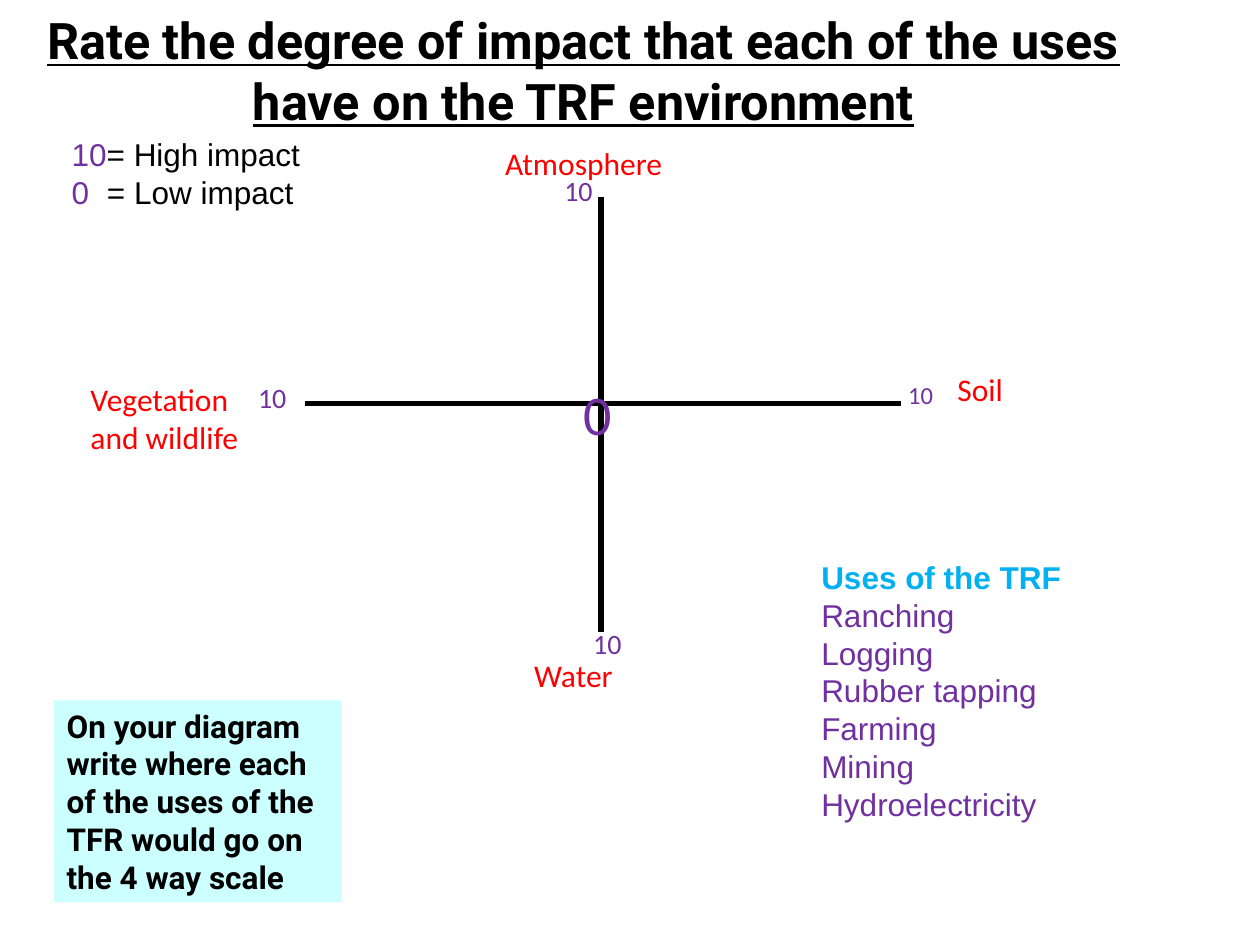
from dataclasses import dataclass

from lxml import etree
from pptx import Presentation
from pptx.dml.color import RGBColor
from pptx.enum.shapes import MSO_CONNECTOR
from pptx.enum.text import MSO_ANCHOR, MSO_AUTO_SIZE, PP_ALIGN
from pptx.oxml.ns import qn
from pptx.util import Inches, Pt

STRAIGHT = MSO_CONNECTOR.STRAIGHT
MIDDLE = MSO_ANCHOR.MIDDLE
TOP = MSO_ANCHOR.TOP
LEFT = PP_ALIGN.LEFT
CENTER = PP_ALIGN.CENTER
GROW = MSO_AUTO_SIZE.SHAPE_TO_FIT_TEXT
FIXED = MSO_AUTO_SIZE.NONE


@dataclass(frozen=True)
class Theme:
    ink: str = "000000"
    label: str = "FF0000"
    score: str = "7030A0"
    heading: str = "00B0F0"
    panel: str = "CCFFFF"
    display_font: str = "Roboto"
    label_font: str = "Calibri"
    list_font: str = "Arial"
    title_size: float = 28.8
    zero_size: float = 32
    body_size: float = 18
    score_size: float = 16
    small_score_size: float = 14
    axis_width: float = 3


THEME = Theme()


def add_text(slide, box, lines, *, font, size=THEME.body_size, color=THEME.ink,
             bold=False, underline=False, align=LEFT, anchor=TOP,
             fit=GROW, fill=None):
    """Each line is a list of (text, overrides) runs; a plain string is one line."""
    holder = slide.shapes.add_textbox(*map(Inches, box))
    if fill:
        holder.fill.solid()
        holder.fill.fore_color.rgb = RGBColor.from_string(fill)
    frame = holder.text_frame
    frame.word_wrap = True
    frame.auto_size = fit
    frame.vertical_anchor = anchor
    if isinstance(lines, str):
        lines = [[(lines, {})]]
    for index, runs in enumerate(lines):
        paragraph = frame.paragraphs[0] if index == 0 else frame.add_paragraph()
        paragraph.alignment = align
        for text, overrides in runs:
            run = paragraph.add_run()
            run.text = text
            run.font.name = font
            run.font.size = Pt(size)
            run.font.bold = overrides.get("bold", bold)
            run.font.underline = underline
            run.font.color.rgb = RGBColor.from_string(overrides.get("color", color))
    return frame


def add_tab_stop(paragraph, position):
    properties = paragraph._p.get_or_add_pPr()
    stops = etree.SubElement(properties, qn("a:tabLst"))
    etree.SubElement(stops, qn("a:tab"), pos=str(Inches(position)), algn="l")


def add_axis(slide, start, end):
    axis = slide.shapes.add_connector(STRAIGHT, *map(Inches, (*start, *end)))
    axis.line.color.rgb = RGBColor.from_string(THEME.ink)
    axis.line.width = Pt(THEME.axis_width)
    etree.SubElement(axis._element.spPr, qn("a:effectLst"))


def add_title(slide, box):
    add_text(slide, box,
             "Rate the degree of impact that each of the uses have on the TRF environment",
             font=THEME.display_font, size=THEME.title_size, bold=True,
             underline=True, align=CENTER, anchor=MIDDLE, fit=FIXED)


def add_key(slide, box):
    score = {"color": THEME.score}
    frame = add_text(slide, box,
                     [[("10", score), ("= High impact", {})],
                      [("0", score), ("\t= Low impact", {})]],
                     font=THEME.list_font)
    add_tab_stop(frame.paragraphs[1], 0.28)


def add_four_way_scale(slide, box):
    """Box spans the axes; labels and scores are offset from its top left corner."""
    left, top, width, height = box
    center_x, center_y = 2.35, 1.64
    add_axis(slide, (left + center_x, top), (left + center_x, top + height))
    add_axis(slide, (left, top + center_y), (left + width, top + center_y))

    labels = [
        ("Atmosphere", 1.49, -0.47, 2.05, 0.4),
        ("Water", 1.72, 3.6, 2.05, 0.4),
        ("Vegetation and wildlife", -1.8, 1.41, 1.46, 0.71),
        ("Soil", 5.08, 1.33, 1.1, 0.4),
    ]
    scores = [
        ("0", THEME.zero_size, 2.11, 1.4, 0.31, 0.63),
        ("10", THEME.score_size, -0.47, 1.41, 0.62, 0.37),
        ("10", THEME.small_score_size, 4.69, 1.41, 0.47, 0.34),
        ("10", THEME.score_size, 2.19, 3.36, 0.55, 0.37),
        ("10", THEME.score_size, 1.96, -0.23, 1.88, 0.37),
    ]
    for name, dx, dy, *extent in labels:
        add_text(slide, (left + dx, top + dy, *extent), name,
                 font=THEME.label_font, color=THEME.label)
    for score, size, dx, dy, *extent in scores:
        add_text(slide, (left + dx, top + dy, *extent), score,
                 font=THEME.label_font, size=size, color=THEME.score)


def add_task(slide, box):
    add_text(slide, box,
             "On your diagram write where each of the uses of the TFR would go "
             "on the 4 way scale",
             font=THEME.display_font, bold=True, fill=THEME.panel)


def add_uses(slide, box):
    uses = ["Ranching", "Logging", "Rubber tapping", "Farming", "Mining",
            "Hydroelectricity"]
    heading = ("Uses of the TRF", {"color": THEME.heading, "bold": True})
    add_text(slide, box, [[heading]] + [[(use, {})] for use in uses],
             font=THEME.list_font, color=THEME.score)


def main():
    deck = Presentation()
    deck.slide_width, deck.slide_height = Inches(10), Inches(7.5)
    slide = deck.slides.add_slide(deck.slide_layouts[6])
    add_title(slide, (0, 0.16, 9.26, 0.79))
    add_four_way_scale(slide, (2.42, 1.56, 4.73, 3.46))
    add_task(slide, (0.43, 5.56, 2.28, 1.6))
    add_uses(slide, (6.42, 4.38, 2.97, 2.2))
    add_key(slide, (0.47, 1.02, 2.89, 0.71))
    deck.save("out.pptx")


if __name__ == "__main__":
    main()
